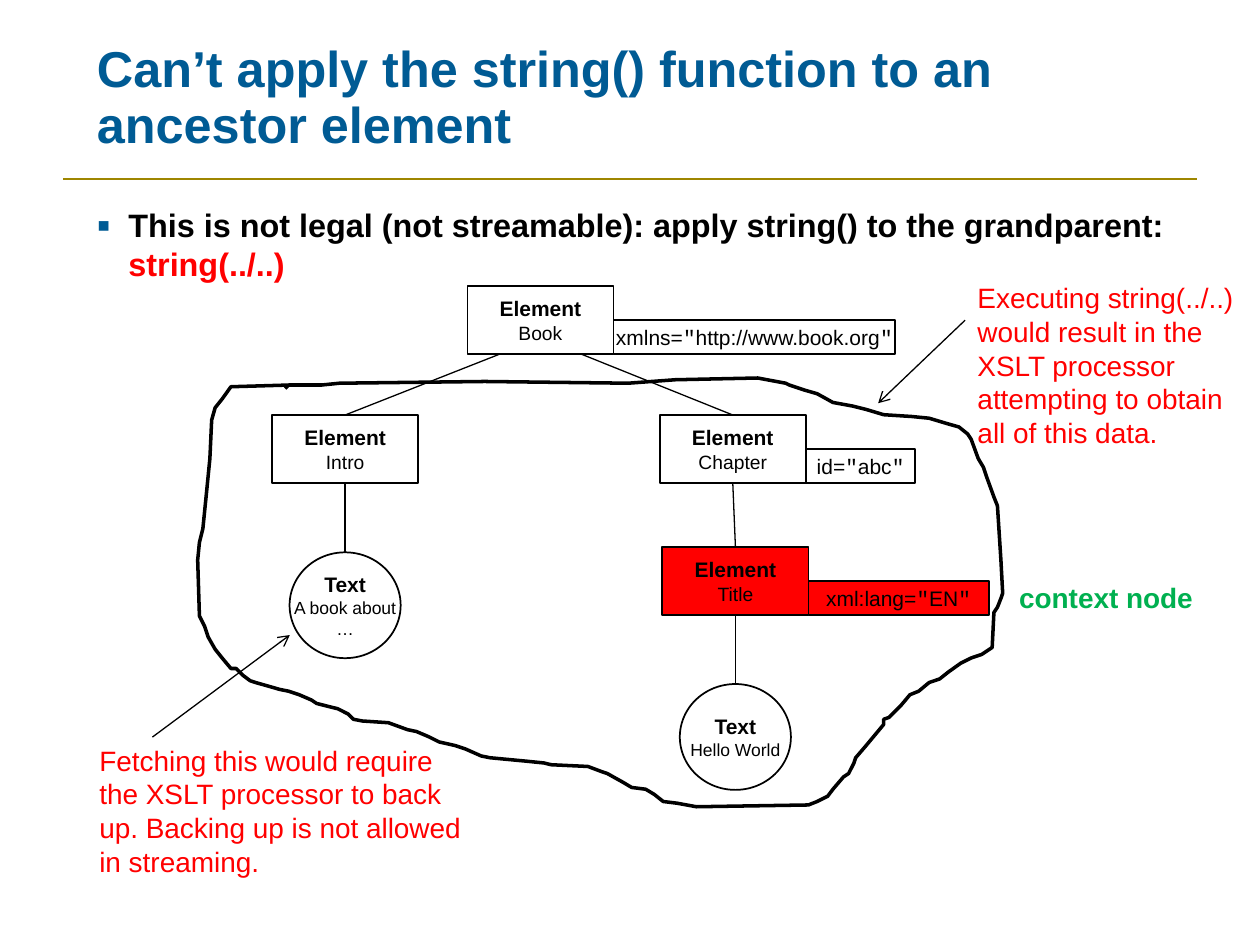
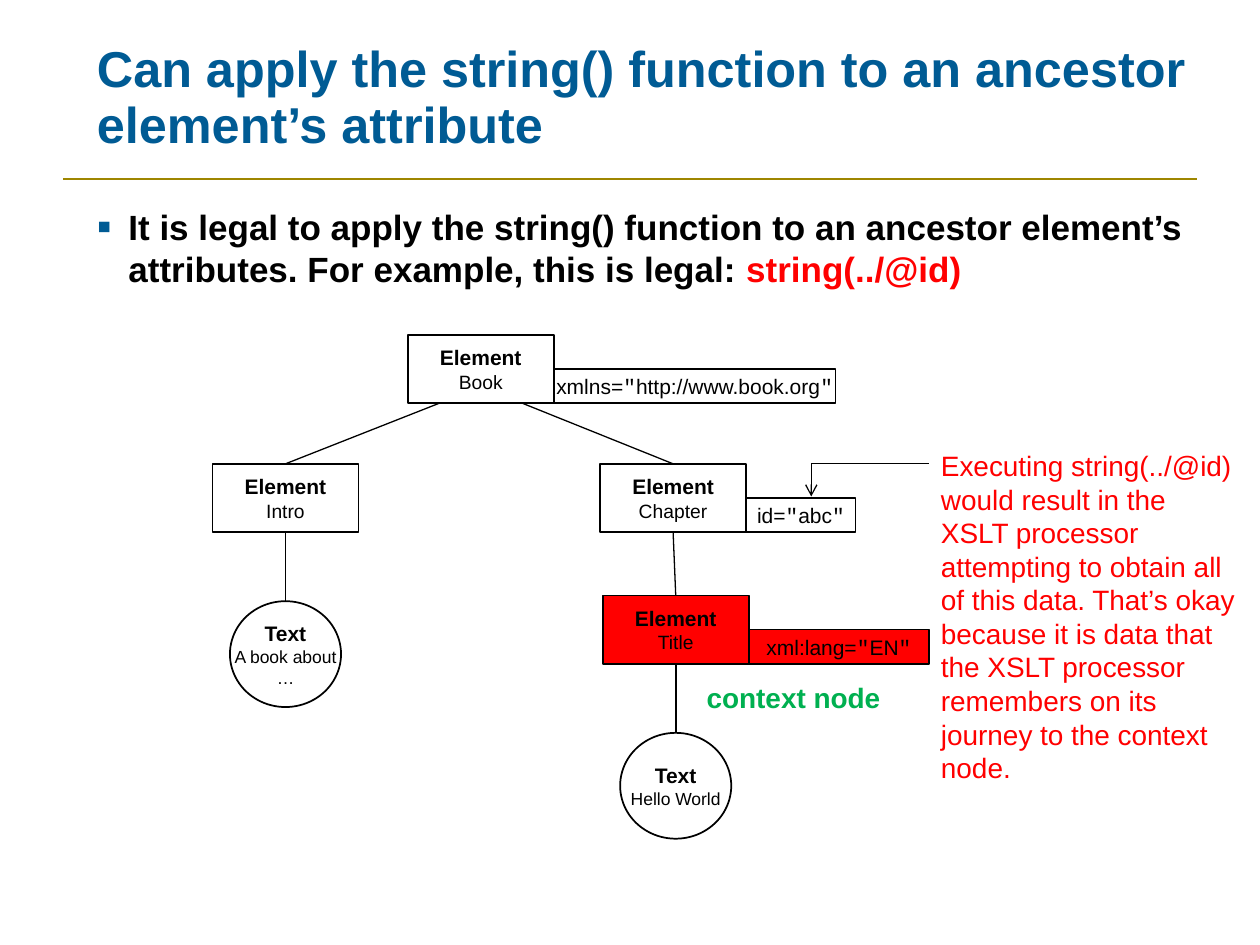
from lxml import etree
from pptx import Presentation
from pptx.dml.color import RGBColor
from pptx.enum.shapes import MSO_CONNECTOR, MSO_SHAPE
from pptx.enum.text import MSO_ANCHOR, MSO_AUTO_SIZE, PP_ALIGN
from pptx.oxml.ns import qn
from pptx.util import Pt

BLACK = RGBColor(0x00, 0x00, 0x00)
WHITE = RGBColor(0xFF, 0xFF, 0xFF)
RED = RGBColor(0xFF, 0x00, 0x00)
GREEN = RGBColor(0x00, 0xB0, 0x50)
BLUE = RGBColor(0x00, 0x5B, 0x94)
GOLD = RGBColor(0x9E, 0x86, 0x00)
RECT, OVAL = MSO_SHAPE.RECTANGLE, MSO_SHAPE.OVAL
STRAIGHT = MSO_CONNECTOR.STRAIGHT
LEFT, CENTER = PP_ALIGN.LEFT, PP_ALIGN.CENTER
TOP, MIDDLE = MSO_ANCHOR.TOP, MSO_ANCHOR.MIDDLE
NO_FIT = MSO_AUTO_SIZE.NONE
SANS, MONO = "Arial", "Courier New"
LEADING = 1.2
NODE_W, NODE_H, TAG_H = 83.5, 39, 19.5
DISC_W, DISC_H, DROP = 63.5, 60.5, 39.5

OUTLINE = [
    (53, 4), (19, 5), (14, 12), (10, 17), (8, 24), (7, 46), (5, 66), (3, 86),
    (1, 94), (0, 104), (1, 136), (4, 142), (6, 148), (10, 155), (14, 160),
    (19, 166), (22, 166), (26, 170), (30, 173), (33, 174), (40, 176), (47, 178),
    (52, 179), (58, 181), (65, 184), (68, 186), (76, 188), (80, 189), (86, 192),
    (89, 195), (94, 196), (109, 197), (120, 201), (125, 202), (132, 205),
    (138, 208), (147, 210), (153, 212), (162, 216), (167, 217), (188, 219),
    (198, 220), (202, 221), (223, 222), (231, 225), (234, 226), (243, 231),
    (248, 234), (256, 235), (261, 238), (266, 242), (274, 243), (285, 245),
    (349, 244), (354, 242), (360, 239), (363, 235), (369, 228), (372, 226),
    (375, 220), (376, 217), (382, 210), (387, 204), (392, 198), (392, 195),
    (395, 194), (397, 192), (402, 187), (407, 181), (412, 179), (418, 174),
    (424, 172), (429, 168), (436, 163), (442, 160), (448, 158), (454, 154),
    (455, 134), (457, 131), (459, 126), (460, 123), (459, 104), (457, 73),
    (455, 68), (451, 57), (449, 51), (446, 46), (442, 35), (440, 32), (435, 28),
    (428, 26), (418, 23), (408, 22), (392, 21), (382, 18), (374, 16), (363, 14),
    (354, 9), (347, 7), (338, 4), (336, 3), (320, 0), (273, 1), (246, 3),
    (164, 1.5), (81, 3), (71, 4), (52, 4), (50, 6),
]


def write(frame, paras, size=12, color=BLACK, bold=False, align=LEFT,
          anchor=TOP, wrap=True, after=0, leading=None):
    """Fill a text frame; each paragraph is a list of (text, changes) runs."""
    frame.word_wrap, frame.auto_size = wrap, NO_FIT
    frame.vertical_anchor = anchor
    for i, runs in enumerate(paras):
        para = frame.add_paragraph() if i else frame.paragraphs[0]
        para.alignment = align
        big = runs[0][1].get("size", size)
        para.line_spacing = Pt(leading or round(big * LEADING, 1))
        para.space_before, para.space_after = Pt(0), Pt(after)
        for text, diff in runs:
            if text == "\n":
                para.add_line_break()
                continue
            run = para.add_run()
            run.text = text
            font = run.font
            font.name = diff.get("font", SANS)
            font.size = Pt(diff.get("size", size))
            font.bold = diff.get("bold", bold)
            font.color.rgb = diff.get("color", color)


def place(shape, box):
    """Move a shape to a box of left, top, width and height."""
    shape.left, shape.top, shape.width, shape.height = map(Pt, box)


def bullet(para):
    """Give a paragraph a hanging square bullet."""
    props = para._p.get_or_add_pPr()
    props.set("marL", str(Pt(18)))
    props.set("indent", str(Pt(-18)))
    tint = etree.SubElement(props, qn("a:buClr"))
    etree.SubElement(tint, qn("a:srgbClr"), val=str(BLUE))
    etree.SubElement(props, qn("a:buSzPct"), val="120000")
    etree.SubElement(props, qn("a:buFont"), typeface=SANS)
    etree.SubElement(props, qn("a:buChar"), char="▪")


def link(slide, x1, y1, x2, y2, color=BLACK, width=0.75, arrow=False):
    """Draw a straight line, with an arrowhead at its end if asked."""
    line = slide.shapes.add_connector(STRAIGHT, Pt(x1), Pt(y1), Pt(x2), Pt(y2))
    line.line.color.rgb, line.line.width = color, Pt(width)
    props = line.element.spPr
    if arrow:
        etree.SubElement(props.find(qn("a:ln")), qn("a:tailEnd"), type="arrow")
    etree.SubElement(props, qn("a:effectLst"))
    return line


def join(slide, high, low, width):
    """Link the bottom of one shape to the top of another."""
    line = link(slide, 0, 0, 0, 0, width=width)
    line.begin_connect(high, 2)
    line.end_connect(low, 0)


def block(slide, kind, box, paras, fill=WHITE):
    """Draw an outlined shape with centred text."""
    shape = slide.shapes.add_shape(kind, *map(Pt, box))
    shape.shadow.inherit = False
    shape.fill.solid()
    shape.fill.fore_color.rgb = fill
    shape.line.color.rgb, shape.line.width = BLACK, Pt(1)
    write(shape.text_frame, paras, align=CENTER, anchor=MIDDLE, wrap=False)
    return shape


def node(slide, x, y, name, fill=WHITE):
    """Draw an element box."""
    paras = [[("Element", {"bold": True})], [(name, {"size": 11})]]
    return block(slide, RECT, (x, y, NODE_W, NODE_H), paras, fill)


def tag(slide, x, y, width, name, value, fill=WHITE):
    """Draw an attribute at the lower right of the element at x, y."""
    quote = ('"', {"font": MONO})
    runs = [(name + "=", {}), quote, (value, {}), quote]
    box = (x + NODE_W, y + NODE_H - TAG_H, width, TAG_H)
    block(slide, RECT, box, [runs], fill)


def leaf(slide, owner, x, y, lines):
    """Draw a text node under the element at x, y and join the two."""
    paras = [[("Text", {"bold": True})]]
    paras += [[(line, {"size": 10})] for line in lines]
    box = (x + (NODE_W - DISC_W) / 2, y + NODE_H + DROP, DISC_W, DISC_H)
    join(slide, owner, block(slide, OVAL, box, paras), 1)


def tree(slide, x, y):
    """Draw the document tree with its upper left corner at x, y."""
    root, row, deep = x + 111.6, y + 73.75, y + 149
    chap, head = x + 221.5, x + 223
    book = node(slide, root, y, "Book")
    intro = node(slide, x, row, "Intro")
    chapter = node(slide, chap, row, "Chapter")
    title = node(slide, head, deep, "Title", RED)
    tag(slide, root, y, 161, "xmlns", "http://www.book.org")
    tag(slide, chap, row, 62.6, "id", "abc")
    tag(slide, head, deep, 103, "xml:lang", "EN", RED)
    mid = book.left.pt + NODE_W / 2
    for child, shift in ((intro, -23.4), (chapter, 23.4)):
        line = link(slide, mid + shift, y + NODE_H, mid, row)
        line.end_connect(child, 0)
    join(slide, chapter, title, 0.75)
    leaf(slide, intro, x, row, ["A book about", "…"])
    leaf(slide, title, head, deep, ["Hello World"])


def label(slide, box, text, **look):
    """Add a free caption."""
    shape = slide.shapes.add_textbox(*map(Pt, box))
    write(shape.text_frame, [[(text, {})]], size=16, after=6, **look)


def note(slide, box, text, *lines):
    """Add a red note and its pointer lines, given relative to its corner."""
    x, y = box[:2]
    for x1, y1, x2, y2, arrow in lines:
        link(slide, x + x1, y + y1, x + x2, y + y2, arrow=arrow)
    label(slide, box, text, color=RED)


def lasso(slide, x, y):
    """Draw the hand-drawn outline round the data, from the corner x, y."""
    start, *rest = [(x + dx, y + dy) for dx, dy in OUTLINE]
    path = slide.shapes.build_freeform(*start, scale=Pt(1))
    path.add_line_segments(rest, close=False)
    shape = path.convert_to_shape()
    shape.shadow.inherit = False
    shape.fill.background()
    shape.line.color.rgb, shape.line.width = BLACK, Pt(2)


def page(deck, title, runs, size, height):
    """Add a slide with its title, rule and one bullet."""
    slide = deck.slides.add_slide(deck.slide_layouts[1])
    head, body = slide.placeholders
    place(head, (48.2, 21.6, 648, 68.4))
    write(head.text_frame, [[(title, {})]], size=28.8, color=BLUE, bold=True,
          anchor=MIDDLE, leading=32)
    place(body, (48.2, 113.8, 648, height))
    bullet(body.text_frame.paragraphs[0])
    write(body.text_frame, [runs], size=size, bold=True, after=6)
    link(slide, 36, 102.2, 684, 102.2, color=GOLD, width=1)
    return slide


def illegal(deck):
    """Build the slide on the call that cannot be streamed."""
    runs = [("This is not legal (not streamable): apply string() to the grandparent:", {}),
            ("\n", {}), ("string(../..)", {"color": RED})]
    slide = page(deck, "Can’t apply the string() function to an ancestor element",
                 runs, 18.5, 62.6)
    tree(slide, 155.5, 163.4)
    label(slide, (575.3, 328.3, 115.2, 26.6), "context node",
          color=GREEN, bold=True, wrap=False)
    lasso(slide, 113, 216)
    note(slide, (49.7, 421.2, 227.5, 85),
         "Fetching this would require the XSLT processor to back up. "
         "Backing up is not allowed in streaming.",
         (37.4, 0, 115.9, -58.3, True))
    note(slide, (551.5, 157, 168.5, 104.4),
         "Executing string(../..) would result in the XSLT processor "
         "attempting to obtain all of this data.",
         (0, 26, -49.7, 73.4, True))


def legal(deck):
    """Build the slide on the call that can be streamed."""
    runs = [("It is legal to apply the string() function to an ancestor element’s "
             "attributes. For example, this is legal: ", {}),
            ("string(../@id)", {"color": RED})]
    slide = page(deck, "Can apply the string() function to an ancestor "
                 "element’s attribute", runs, 20, 77)
    tree(slide, 121.4, 191.3)
    label(slide, (396.7, 385.2, 115.2, 26.6), "context node",
          color=GREEN, bold=True, wrap=False)
    note(slide, (530.6, 252.7, 183.6, 201),
         "Executing string(../@id) would result in the XSLT processor "
         "attempting to obtain all of this data. That’s okay because it is "
         "data that the XSLT processor remembers on its journey to the "
         "context node.",
         (-67, 12.2, -67, 31, True), (-67, 12.2, 0, 12.2, False))


def main():
    """Build and save the deck."""
    deck = Presentation()
    deck.slide_width, deck.slide_height = Pt(720), Pt(540)
    illegal(deck)
    legal(deck)
    deck.save("out.pptx")


if __name__ == "__main__":
    main()
